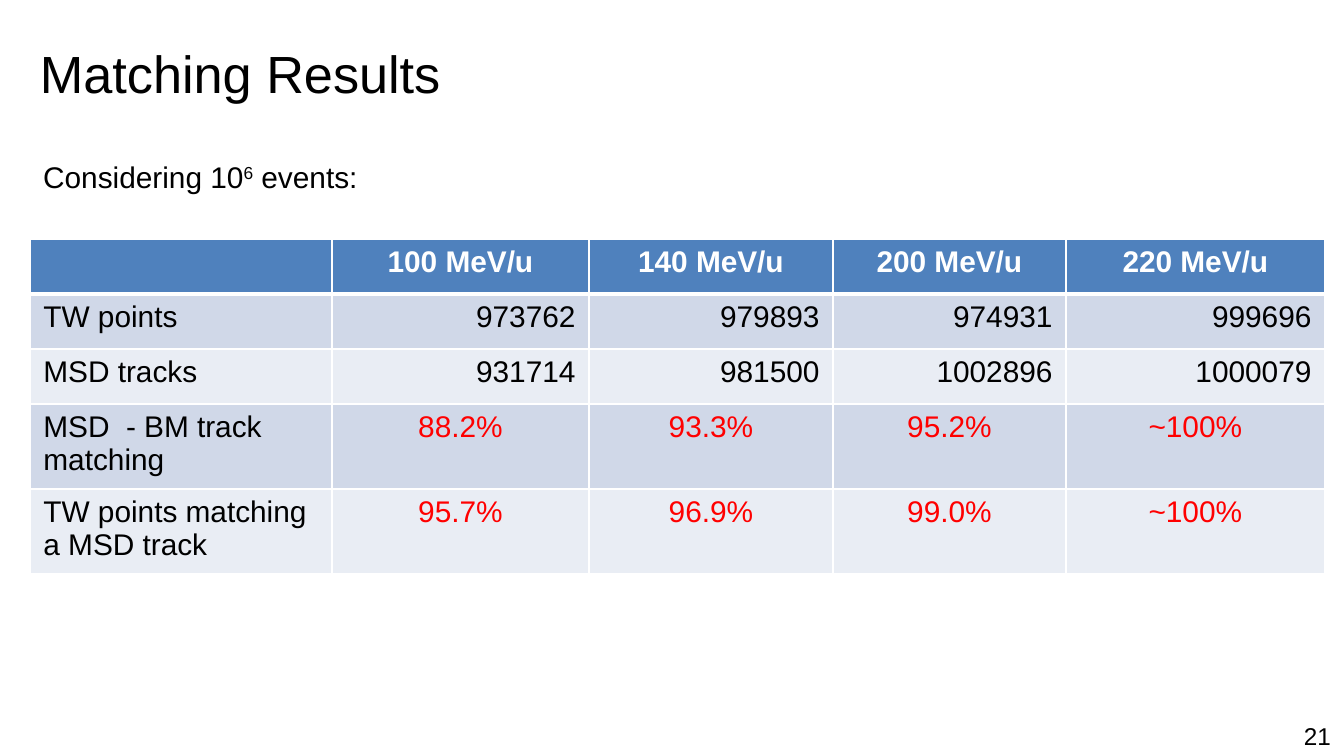
import pptx
import pptx.dml.color
import pptx.enum.text
import pptx.oxml
import pptx.oxml.ns
import pptx.util

ALIGN = pptx.enum.text.PP_ALIGN
ANCHOR = pptx.enum.text.MSO_ANCHOR
BLACK, WHITE, RED = "000000", "FFFFFF", "FF0000"
HEADER_FILL = "4F81BD"
BAND_FILLS = ["D0D8E8", "E9EDF4"]
COLUMN_WIDTHS = [302, 257, 244, 233, 259]
ROW_HEIGHTS = [55, 55, 55, 84, 84]
ROWS = [
    ["", "100 MeV/u", "140 MeV/u", "200 MeV/u", "220 MeV/u"],
    ["TW points", "973762", "979893", "974931", "999696"],
    ["MSD tracks", "931714", "981500", "1002896", "1000079"],
    ["MSD  - BM track matching", "88.2%", "93.3%", "95.2%", "~100%"],
    ["TW points matching a MSD track", "95.7%", "96.9%", "99.0%", "~100%"],
]


def px(length):
    return pptx.util.Emu(round(length * 914400 / 134.4))


def color(value):
    return pptx.dml.color.RGBColor.from_string(value)


def add_span(para, text, size, ink=BLACK, bold=False, baseline=0):
    span = para.add_run()
    span.text = text
    span.font.name = "Arial"
    span.font.size = pptx.util.Pt(size)
    span.font.bold = bold
    span.font.color.rgb = color(ink)
    if baseline:
        span._r.get_or_add_rPr().set("baseline", str(baseline * 1000))


def add_text(page, left, top, width, height, anchor=ANCHOR.TOP, wrap=True):
    box = page.shapes.add_textbox(px(left), px(top), px(width), px(height))
    box.text_frame.word_wrap = wrap
    box.text_frame.vertical_anchor = anchor
    return box.text_frame


def add_border(cell, side, width):
    line = pptx.oxml.parse_xml(
        f'<a:{side} {pptx.oxml.ns.nsdecls("a")} w="{pptx.util.Pt(width)}">'
        f'<a:solidFill><a:srgbClr val="{WHITE}"/></a:solidFill></a:{side}>'
    )
    cell._tc.get_or_add_tcPr().append(line)


def style_cell(cell, row, column):
    header_edge = {0: "lnB", 1: "lnT"}.get(row)
    for side in ("lnL", "lnR", "lnT", "lnB"):
        add_border(cell, side, 3 if side == header_edge else 1)
    cell.fill.solid()
    fill = HEADER_FILL if row == 0 else BAND_FILLS[(row - 1) % 2]
    cell.fill.fore_color.rgb = color(fill)


def fill_cell(cell, text, row, column):
    para = cell.text_frame.paragraphs[0]
    is_share = text.endswith("%")
    if column == 0:
        para.alignment = ALIGN.LEFT
    elif row == 0 or is_share:
        para.alignment = ALIGN.CENTER
    else:
        para.alignment = ALIGN.RIGHT
    ink = WHITE if row == 0 else RED if is_share else BLACK
    if text:
        add_span(para, text, 16, ink, bold=row == 0)


def add_results_table(page, left, top):
    frame = page.shapes.add_table(
        len(ROWS), len(COLUMN_WIDTHS), px(left), px(top),
        px(sum(COLUMN_WIDTHS)), px(sum(ROW_HEIGHTS)),
    )
    table = frame.table
    for column, width in zip(table.columns, COLUMN_WIDTHS):
        column.width = px(width)
    for row, height in zip(table.rows, ROW_HEIGHTS):
        row.height = px(height)
    for row, texts in enumerate(ROWS):
        for column, text in enumerate(texts):
            cell = table.cell(row, column)
            style_cell(cell, row, column)
            fill_cell(cell, text, row, column)


def add_title(page, text):
    frame = add_text(page, 40, 32, 1284, 89, ANCHOR.MIDDLE)
    frame.margin_left = frame.margin_right = 0
    frame.margin_top = frame.margin_bottom = 0
    para = frame.paragraphs[0]
    para.line_spacing = 0.9
    add_span(para, text, 28)


def add_event_note(page):
    para = add_text(page, 30, 152, 344, 50, wrap=False).paragraphs[0]
    add_span(para, "Considering 10", 16)
    add_span(para, "6", 16, baseline=30)
    add_span(para, " events:", 16)


def add_page_number(page, number):
    para = add_text(page, 1042, 716, 302, 40, ANCHOR.MIDDLE).paragraphs[0]
    para.alignment = ALIGN.RIGHT
    add_span(para, number, 13)


def main():
    deck = pptx.Presentation()
    deck.slide_width, deck.slide_height = px(1344), px(756)
    page = deck.slides.add_slide(deck.slide_layouts[6])
    add_title(page, "Matching Results")
    add_event_note(page)
    add_results_table(page, 30, 239)
    add_page_number(page, "21")
    deck.save("out.pptx")


if __name__ == "__main__":
    main()
